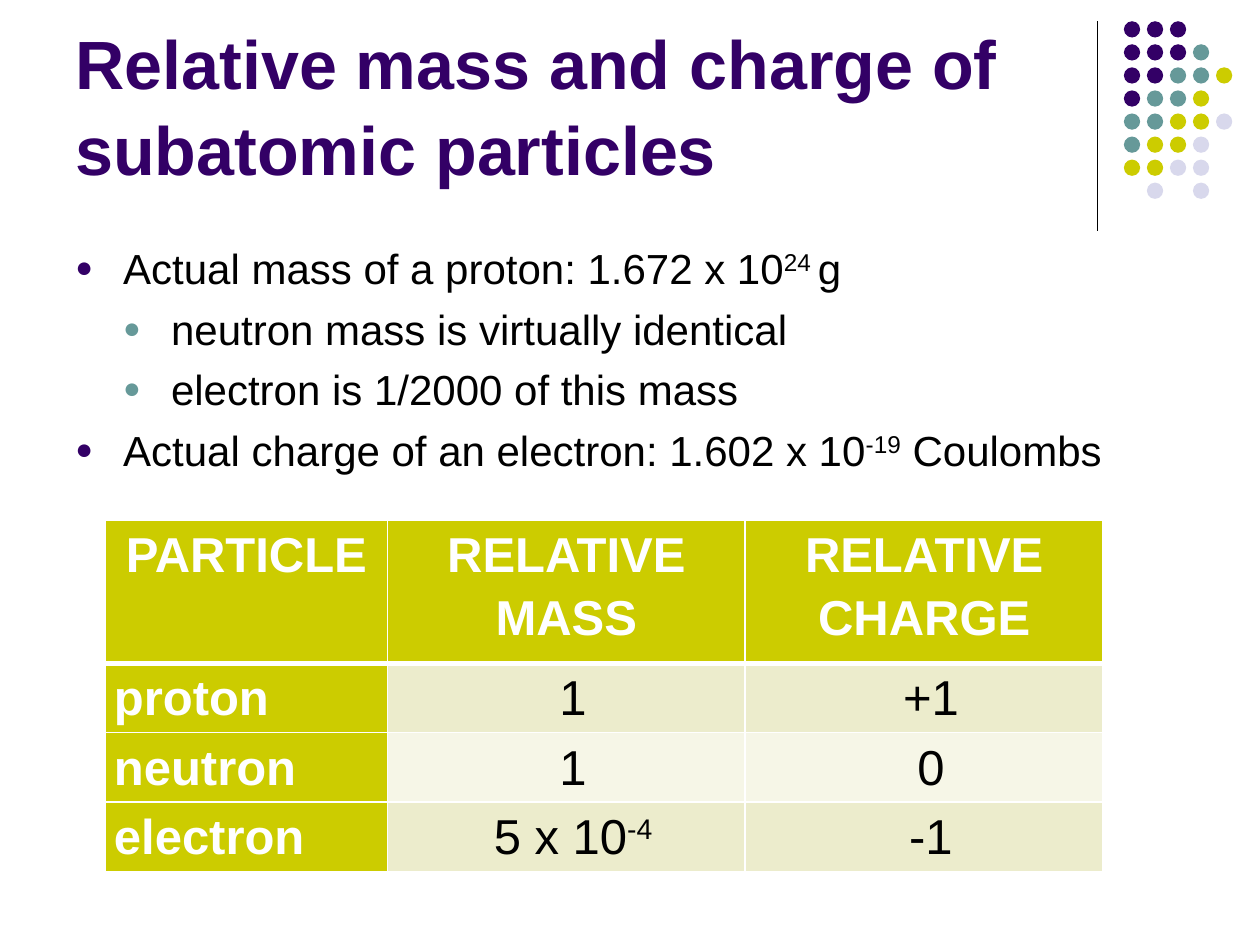
from lxml.etree import SubElement
from pptx import Presentation
from pptx.dml.color import RGBColor
from pptx.enum.shapes import MSO_CONNECTOR, MSO_SHAPE
from pptx.enum.text import MSO_ANCHOR, PP_ALIGN
from pptx.oxml import parse_xml
from pptx.oxml.ns import nsdecls, qn
from pptx.util import Inches, Pt

PURPLE, TEAL, LIME, LILAC = "330066", "669999", "CCCC00", "D8D8EC"
BLACK, WHITE = "000000", "FFFFFF"
BANDS = ["ECECCC", "F6F6E7"]
SLIDE_W, SLIDE_H = Inches(10), Inches(7.5)
DOT_COLORS = {"P": PURPLE, "T": TEAL, "L": LIME, "V": LILAC}
DOT_ROWS = ["PPP", "PPPT", "PPTTL", "PTTL", "TTLLV", "TLLV", "LLVV", ".V.V"]
BULLETS = [
    (0, "Actual mass of a proton: 1.672 x 10^24 ^g"),
    (1, "neutron mass is virtually identical"),
    (1, "electron is 1/2000 of this mass"),
    (0, "Actual charge of an electron: 1.602 x 10^-19^ Coulombs"),
]
PARTICLES = [
    ["PARTICLE", "RELATIVE MASS", "RELATIVE CHARGE"],
    ["proton", " 1", " +1"],
    ["neutron", " 1", " 0"],
    ["electron", " 5 x 10^-4^", " -1"],
]


def rgb(color):
    """Turn a hex string into a colour."""
    return RGBColor.from_string(color)


def grid(col, row, cols, rows):
    """Turn hundredths of the slide's width and height into a box."""
    return [int(v * side / 100) for v, side in
            zip((col, row, cols, rows), (SLIDE_W, SLIDE_H) * 2)]


def write(p, text, size, color=BLACK, bold=False, align=PP_ALIGN.LEFT,
          spacing=None, before=0, after=0):
    """Fill a paragraph, raising the parts that stand between carets."""
    p.alignment, p.line_spacing = align, spacing
    p.space_before, p.space_after = Pt(before), Pt(after)
    for i, part in enumerate(text.split("^")):
        if part:
            r = p.add_run()
            r.text = part
            r.font.name, r.font.size, r.font.bold = "Arial", Pt(size), bold
            r.font.color.rgb = rgb(color)
            if i % 2:
                r.font._element.set("baseline", "30000")


def add_bullet(p, level, color):
    """Give a paragraph a hanging round bullet for its level."""
    pPr = p._p.get_or_add_pPr()
    pPr.set("marL", str(Inches(0.38) * (level + 1)))
    pPr.set("indent", str(-Inches(0.38)))
    SubElement(SubElement(pPr, qn("a:buClr")), qn("a:srgbClr"), val=color)
    SubElement(pPr, qn("a:buSzPct"), val="70000")
    SubElement(pPr, qn("a:buFont"), typeface="Arial")
    SubElement(pPr, qn("a:buChar"), char="●")


def set_borders(cell, top, bottom):
    """Draw white cell borders with the given top and bottom widths."""
    tcPr = cell._tc.get_or_add_tcPr()
    for i, (side, width) in enumerate(zip("LRTB", (1, 1, top, bottom))):
        tcPr.insert(i, parse_xml(
            f'<a:ln{side} {nsdecls("a")} w="{Pt(width)}"><a:solidFill>'
            f'<a:srgbClr val="{WHITE}"/></a:solidFill></a:ln{side}>'))


def add_frame(s, box, anchor):
    """Add a wrapping text box and return its text frame."""
    tf = s.shapes.add_textbox(*box).text_frame
    tf.word_wrap, tf.vertical_anchor = True, anchor
    return tf


def add_divider(s, box):
    """Draw the thin upright rule along the left side of a box."""
    x, y, _, h = box
    line = s.shapes.add_connector(MSO_CONNECTOR.STRAIGHT, x, y, x, y + h)
    line.line.color.rgb, line.line.width = rgb(BLACK), Pt(0.75)
    SubElement(line._element.spPr, qn("a:effectLst"))


def add_dots(s, box):
    """Spread the grid of coloured dots over a box."""
    x, y, w, h = box
    d = int(w * 0.15)
    dx, dy = (w - d) / 4, (h - d) / (len(DOT_ROWS) - 1)
    group = s.shapes.add_group_shape()
    for j, row in enumerate(DOT_ROWS):
        for i, key in enumerate(row):
            if key in DOT_COLORS:
                sp = group.shapes.add_shape(
                    MSO_SHAPE.OVAL, int(x + i * dx), int(y + j * dy), d, d)
                sp.shadow.inherit = False
                sp.fill.solid()
                sp.fill.fore_color.rgb = rgb(DOT_COLORS[key])
                sp.line.fill.background()


def add_title(s, box):
    """Set the heading on the bottom of a box."""
    tf = add_frame(s, box, MSO_ANCHOR.BOTTOM)
    write(tf.paragraphs[0], "Relative mass and charge of subatomic particles",
          39, color=PURPLE, bold=True, spacing=1.05)


def add_bullets(s, box):
    """Set the two-level list in a box."""
    tf = add_frame(s, box, MSO_ANCHOR.TOP)
    for i, (level, text) in enumerate(BULLETS):
        p = tf.add_paragraph() if i else tf.paragraphs[0]
        p.level = level
        write(p, text, 24, before=5.8)
        add_bullet(p, level, (PURPLE, TEAL)[level])


def add_particles(s, box):
    """Lay the particle table out in a box."""
    x, y, w, h = box
    table = s.shapes.add_table(len(PARTICLES), 3, x, y, w, h).table
    for column, share in zip(table.columns, (2.24, 2.84, 2.84)):
        column.width = int(w * share / 7.92)
    for row, share in zip(table.rows, (1.14, 0.55, 0.55, 0.55)):
        row.height = int(h * share / 2.79)
    for j, texts in enumerate(PARTICLES):
        for i, text in enumerate(texts):
            cell, head = table.cell(j, i), j == 0 or i == 0
            cell.margin_left = cell.margin_right = Inches(0.07)
            cell.margin_top = cell.margin_bottom = 0
            cell.fill.solid()
            cell.fill.fore_color.rgb = rgb(LIME if head else BANDS[(j - 1) % 2])
            set_borders(cell, 3 if j == 1 else 1, 3 if j == 0 else 1)
            write(cell.text_frame.paragraphs[0], text, 28,
                  color=WHITE if head else BLACK, bold=head,
                  align=PP_ALIGN.LEFT if j and not i else PP_ALIGN.CENTER,
                  spacing=1.15, after=10)


def main():
    """Build the slide and save it."""
    prs = Presentation()
    prs.slide_width, prs.slide_height = SLIDE_W, SLIDE_H
    s = prs.slides.add_slide(prs.slide_layouts[6])
    add_divider(s, grid(87.1, 2.25, 0, 22.15))
    add_dots(s, grid(89.2, 2.25, 8.6, 18.8))
    add_title(s, grid(5, 1.75, 82.5, 18.95))
    add_bullets(s, grid(5, 25, 90, 28.25))
    add_particles(s, grid(8.35, 55, 79.2, 37.2))
    prs.save("out.pptx")


if __name__ == "__main__":
    main()
